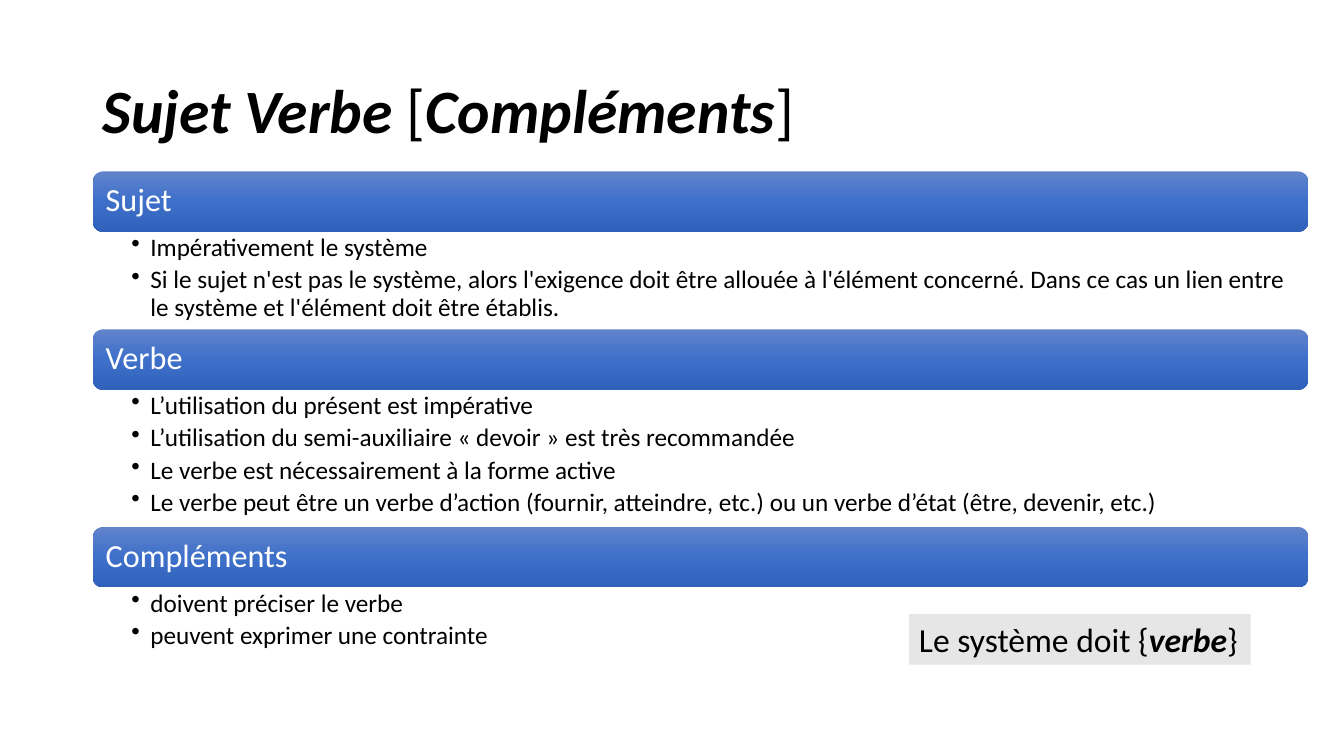
"""Build a slide on the subject, verb and complements of a requirement."""
from copy import deepcopy
from dataclasses import dataclass

from lxml import etree
from pptx import Presentation
from pptx.dml.color import RGBColor
from pptx.enum.shapes import MSO_SHAPE
from pptx.enum.text import MSO_ANCHOR, MSO_AUTO_SIZE, PP_ALIGN
from pptx.oxml.ns import qn
from pptx.shapes.autoshape import Shape
from pptx.slide import Slide
from pptx.util import Cm, Pt

ROUND = MSO_SHAPE.ROUNDED_RECTANGLE
TOP, MIDDLE = MSO_ANCHOR.TOP, MSO_ANCHOR.MIDDLE
NO_FIT = MSO_AUTO_SIZE.NONE
GROW = MSO_AUTO_SIZE.SHAPE_TO_FIT_TEXT
LEFT = PP_ALIGN.LEFT


@dataclass(frozen=True)
class Theme:
    font: str = "Calibri"
    ink: str = "000000"
    light: str = "FFFFFF"
    grey: str = "E7E6E6"
    blues: tuple[str, ...] = ("6183CB", "3E70CA", "3062BB")
    title: float = 44
    head: float = 23
    body: float = 18
    label: float = 24


@dataclass(frozen=True)
class Run:
    text: str
    strong: bool = False


@dataclass(frozen=True)
class Box:
    left: float
    top: float
    width: float
    height: float


@dataclass(frozen=True)
class Part:
    head: str
    points: tuple[str, ...]
    height: float


THEME = Theme()
EDGE, START, WIDTH, BAR = 2.34, 4.32, 30.63, 1.52
TITLE = (Run("Sujet Verbe ", True), Run("["), Run("Compléments", True), Run("]"))
LABEL = (Run("Le système doit {"), Run("verbe", True), Run("}"))
PARTS = (
    Part("Sujet", (
        "Impérativement le système",
        "Si le sujet n'est pas le système, alors l'exigence doit être allouée à "
        "l'élément concerné. Dans ce cas un lien entre le système et l'élément "
        "doit être établis.",
    ), 2.46),
    Part("Verbe", (
        "L’utilisation du présent est impérative",
        "L’utilisation du semi-auxiliaire « devoir » est très recommandée",
        "Le verbe est nécessairement à la forme active",
        "Le verbe peut être un verbe d’action (fournir, atteindre, etc.) ou un "
        "verbe d’état (être, devenir, etc.)",
    ), 3.46),
    Part("Compléments", (
        "doivent préciser le verbe",
        "peuvent exprimer une contrainte",
    ), 1.73),
)


def apply(target: object, values: dict[str, object]) -> None:
    """Set each named value on the target."""
    for name, value in values.items():
        setattr(target, name, value)


def place(box: Box) -> tuple[Cm, Cm, Cm, Cm]:
    """Turn a box into slide lengths."""
    return Cm(box.left), Cm(box.top), Cm(box.width), Cm(box.height)


def frame(shape: Shape, anchor: MSO_ANCHOR, sides: tuple[float, float],
          rim: float, wrap: bool = True) -> None:
    """Set the anchor, margins and wrapping of a shape's text."""
    apply(shape.text_frame, {
        "word_wrap": wrap,
        "auto_size": NO_FIT if wrap else GROW,
        "vertical_anchor": anchor,
        "margin_left": Cm(sides[0]),
        "margin_right": Cm(sides[1]),
        "margin_top": Cm(rim),
        "margin_bottom": Cm(rim),
    })


def write(shape: Shape, lines: list[tuple[Run, ...]], size: float, ink: str,
          pitch: float = 0.9, after: float = 0, dots: bool = False) -> None:
    """Write lines of runs into a shape."""
    text = shape.text_frame
    for row, line in enumerate(lines):
        para = text.add_paragraph() if row else text.paragraphs[0]
        apply(para, {"alignment": LEFT, "line_spacing": pitch,
                     "space_after": Pt(after)})
        if dots:
            props = para._p.get_or_add_pPr()
            props.set("marL", str(Cm(0.48)))
            props.set("indent", str(-Cm(0.48)))
            etree.SubElement(props, qn("a:buChar")).set("char", "•")
        for part in line:
            run = para.add_run()
            run.text = part.text
            apply(run.font, {"name": THEME.font, "size": Pt(size),
                             "bold": part.strong, "italic": part.strong})
            run.font.color.rgb = RGBColor.from_string(ink)


def shade(shape: Shape, tones: tuple[str, ...]) -> None:
    """Fill a shape from top to bottom with even steps of colour."""
    fill = shape.fill
    fill.gradient()
    fill.gradient_angle = 270
    stops = shape._element.xpath(".//a:gsLst")[0]
    while len(stops) < len(tones):
        stops.append(deepcopy(stops[0]))
    for step, (stop, tone) in enumerate(zip(fill.gradient_stops, tones)):
        stop.position = step / (len(tones) - 1)
        stop.color.rgb = RGBColor.from_string(tone)


def draw_part(slide: Slide, part: Part, top: float) -> None:
    """Draw a blue bar with its bullet points below."""
    bar = slide.shapes.add_shape(ROUND, *place(Box(EDGE, top, WIDTH, BAR)))
    bar.shadow.inherit = False
    bar.line.fill.background()
    bar.adjustments[0] = 0.17
    shade(bar, THEME.blues)
    frame(bar, MIDDLE, (0.25, 0.25), 0.25)
    write(bar, [(Run(part.head),)], THEME.head, THEME.light)

    box = Box(EDGE, top + BAR, WIDTH, part.height)
    body = slide.shapes.add_textbox(*place(box))
    frame(body, TOP, (0.97, 0.46), 0.08)
    write(body, [(Run(point),) for point in part.points],
          THEME.body, THEME.ink, after=3.6, dots=True)


def main() -> None:
    """Build and save the slide."""
    deck = Presentation()
    apply(deck, {"slide_width": Cm(33.87), "slide_height": Cm(19.05)})
    slide = deck.slides.add_slide(deck.slide_layouts[6])

    title = slide.shapes.add_textbox(*place(Box(EDGE, 1.02, 29.21, 3.68)))
    frame(title, MIDDLE, (0.25, 0.25), 0.13)
    write(title, [TITLE], THEME.title, THEME.ink)

    top = START
    for part in PARTS:
        draw_part(slide, part, top)
        top += BAR + part.height

    label = slide.shapes.add_textbox(*place(Box(22.91, 15.47, 8.61, 1.28)))
    label.fill.solid()
    label.fill.fore_color.rgb = RGBColor.from_string(THEME.grey)
    frame(label, TOP, (0.25, 0.25), 0.13, wrap=False)
    write(label, [LABEL], THEME.label, THEME.ink, pitch=1.0)

    deck.save("out.pptx")


if __name__ == "__main__":
    main()
